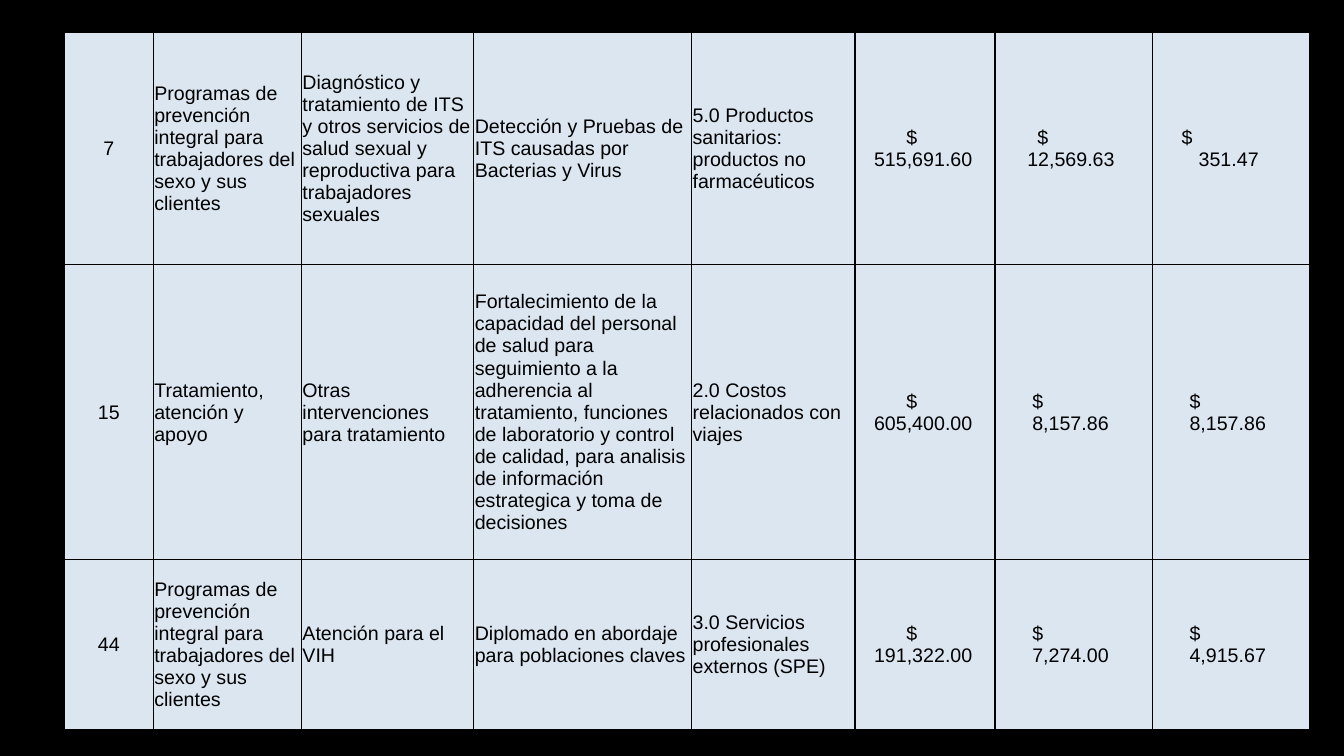
"""Build a slide with a budget table of health programme activities."""
from dataclasses import dataclass

from lxml import etree
from pptx import Presentation, util as u
from pptx.dml.color import RGBColor
from pptx.enum import text
from pptx.oxml import ns


@dataclass(frozen=True)
class Theme:
    back: str = "000000"
    ink: str = "000000"
    line: str = "000000"
    cell: str = "DCE6F1"
    font: str = "Arial"
    size: int = 14
    rule: int = 1


@dataclass(frozen=True)
class Money:
    value: str
    left: float = 0.36
    sign: float = 0.36


class Deck:
    def __init__(self, theme):
        self.theme = theme
        self.prs = Presentation()
        self.prs.slide_width = u.Inches(13.33)
        self.prs.slide_height = u.Inches(7.5)
        self.slide = self.prs.slides.add_slide(self.prs.slide_layouts[6])
        fill = self.slide.background.fill
        fill.solid()
        fill.fore_color.rgb = RGBColor.from_string(theme.back)

    def run(self, para, words):
        run = para.add_run()
        run.text = words
        run.font.name = self.theme.font
        run.font.size = u.Pt(self.theme.size)
        run.font.color.rgb = RGBColor.from_string(self.theme.ink)

    def money(self, para, item):
        props = para._p.get_or_add_pPr()
        props.set("marL", str(u.Inches(item.left)))
        props.set("indent", str(u.Inches(item.sign - item.left)))
        self.run(para, "$")
        para.add_line_break()
        self.run(para, item.value)

    def border(self, cell):
        props = cell._tc.get_or_add_tcPr()
        for spot, side in enumerate(("lnL", "lnR", "lnT", "lnB")):
            line = etree.Element(ns.qn(f"a:{side}"), w=str(u.Pt(self.theme.rule)))
            fill = etree.SubElement(line, ns.qn("a:solidFill"))
            etree.SubElement(fill, ns.qn("a:srgbClr"), val=self.theme.line)
            props.insert(spot, line)

    def cell(self, cell, item):
        cell.margin_left = cell.margin_right = cell.margin_top = u.Inches(0.01)
        cell.margin_bottom = 0
        cell.vertical_anchor = text.MSO_ANCHOR.MIDDLE
        cell.fill.solid()
        cell.fill.fore_color.rgb = RGBColor.from_string(self.theme.cell)
        self.border(cell)
        para = cell.text_frame.paragraphs[0]
        if isinstance(item, Money):
            self.money(para, item)
        else:
            if item.isdigit():
                para.alignment = text.PP_ALIGN.CENTER
            self.run(para, item)

    def table(self, left, top, widths, heights, rows):
        size = (u.Inches(sum(widths)), u.Inches(sum(heights)))
        grid = self.slide.shapes.add_table(
            len(rows), len(widths), u.Inches(left), u.Inches(top), *size).table
        grid.first_row = grid.horz_banding = False
        for col, width in zip(grid.columns, widths):
            col.width = u.Inches(width)
        for line, height, items in zip(grid.rows, heights, rows):
            line.height = u.Inches(height)
            for cell, item in zip(line.cells, items):
                self.cell(cell, item)


WORKERS = ("Programas de prevención integral para trabajadores del sexo "
           "y sus clientes")
WIDTHS = (0.88, 1.47, 1.71, 2.16, 1.62, 1.39, 1.56, 1.56)
HEIGHTS = (2.3, 2.93, 1.69)
ROWS = (
    ("7", WORKERS,
     "Diagnóstico y tratamiento de ITS y otros servicios de salud sexual y "
     "reproductiva para trabajadores sexuales",
     "Detección y Pruebas de ITS causadas por Bacterias y Virus",
     "5.0 Productos sanitarios: productos no farmacéuticos",
     Money("515,691.60", 0.18, 0.5), Money("12,569.63", 0.31, 0.41),
     Money("351.47", 0.45, 0.28)),
    ("15", "Tratamiento, atención y apoyo",
     "Otras intervenciones para tratamiento",
     "Fortalecimiento de la capacidad del personal de salud para seguimiento "
     "a la adherencia al tratamiento, funciones de laboratorio y control de "
     "calidad, para analisis de información estrategica y toma de decisiones",
     "2.0 Costos relacionados con viajes",
     Money("605,400.00", 0.18, 0.5), Money("8,157.86"), Money("8,157.86")),
    ("44", WORKERS, "Atención para el VIH",
     "Diplomado en abordaje para poblaciones claves",
     "3.0 Servicios profesionales externos (SPE)",
     Money("191,322.00", 0.18, 0.5), Money("7,274.00"), Money("4,915.67")),
)


def main():
    deck = Deck(Theme())
    deck.table(0.64, 0.32, WIDTHS, HEIGHTS, ROWS)
    deck.prs.save("out.pptx")


if __name__ == "__main__":
    main()
